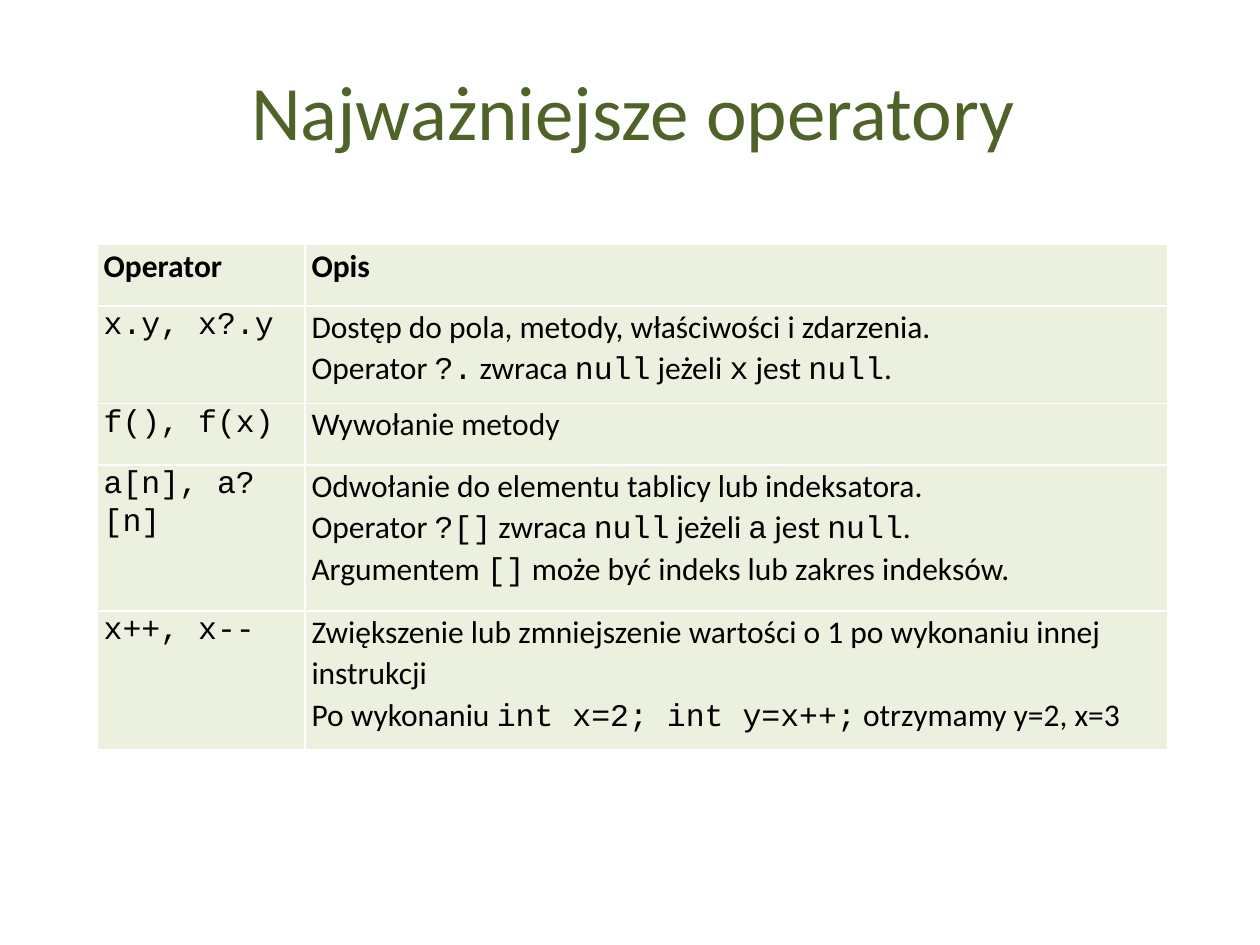
"""Build a slide with a table of the most important operators."""
from lxml.etree import SubElement
from pptx import Presentation
from pptx.dml.color import RGBColor
from pptx.enum.text import MSO_ANCHOR, PP_ALIGN
from pptx.oxml.ns import qn
from pptx.util import Cm, Pt

GREEN = RGBColor(0x4F, 0x62, 0x28)
PALE = RGBColor(0xEB, 0xF1, 0xDE)
BLACK = RGBColor(0, 0, 0)
WHITE = RGBColor(0xFF, 0xFF, 0xFF)
TEXT_FONT, CODE_FONT = "Calibri", "Courier New"

COL_WIDTHS = [4.19, 17.4]
ROW_HEIGHTS = [1.24, 1.96, 1.24, 2.95, 2.79]
ROWS = [
    ("Operator", "Opis"),
    ("`x.y, x?.y`",
     "Dostęp do pola, metody, właściwości i zdarzenia.\n"
     "Operator `?.` zwraca `null` jeżeli `x` jest `null`."),
    ("`f(), f(x)`", "Wywołanie metody"),
    ("`a[n], a?[n]`",
     "Odwołanie do elementu tablicy lub indeksatora.\n"
     "Operator `?[]` zwraca `null` jeżeli `a` jest `null`.\n"
     "Argumentem `[]` może być indeks lub zakres indeksów."),
    ("`x++, x--`",
     "Zwiększenie lub zmniejszenie wartości o 1 po wykonaniu innej instrukcji \n"
     "Po wykonaniu `int x=2; int y=x++;` otrzymamy y=2, x=3"),
]


def write_cell(cell, text, bold):
    """Fill a cell; backticks enclose code."""
    cell.margin_left = cell.margin_right = Cm(0.13)
    cell.margin_top = cell.margin_bottom = Cm(0)
    cell.vertical_anchor = MSO_ANCHOR.TOP
    p = cell.text_frame.paragraphs[0]
    p.line_spacing = 1.07
    p.space_after = Pt(8)
    p.font.size = Pt(18)
    for n, line in enumerate(text.split("\n")):
        if n:
            p.add_line_break()
        for i, part in enumerate(line.split("`")):
            if part:
                r = p.add_run()
                r.text = part
                r.font.name = CODE_FONT if i % 2 else TEXT_FONT
                r.font.size = Pt(18)
                r.font.bold = bold
                r.font.color.rgb = BLACK


def style_cell(cell):
    """Give a cell white borders and a pale fill."""
    tc_pr = cell._tc.get_or_add_tcPr()
    for side in ("a:lnL", "a:lnR", "a:lnT", "a:lnB"):
        ln = SubElement(tc_pr, qn(side), w=str(Pt(1)))
        fill = SubElement(ln, qn("a:solidFill"))
        SubElement(fill, qn("a:srgbClr"), val=str(WHITE))
    cell.fill.solid()
    cell.fill.fore_color.rgb = PALE


prs = Presentation()
prs.slide_width, prs.slide_height = Cm(25.4), Cm(19.05)
s = prs.slides.add_slide(prs.slide_layouts[5])

title = s.shapes.title
title.left, title.top = Cm(0.51), Cm(1.3)
title.width, title.height = Cm(24.51), Cm(1.83)
tf = title.text_frame
tf.text = "Najważniejsze operatory"
tf.vertical_anchor = MSO_ANCHOR.MIDDLE
p = tf.paragraphs[0]
p.alignment = PP_ALIGN.CENTER
r = p.runs[0]
r.font.name = TEXT_FONT
r.font.size = Pt(44)
r.font.color.rgb = GREEN

table = s.shapes.add_table(
    len(ROWS), len(COL_WIDTHS), Cm(1.96), Cm(4.93),
    Cm(sum(COL_WIDTHS)), Cm(sum(ROW_HEIGHTS))).table
table.horz_banding = False
for col, width in zip(table.columns, COL_WIDTHS):
    col.width = Cm(width)
for row, height, texts in zip(table.rows, ROW_HEIGHTS, ROWS):
    row.height = Cm(height)
    for cell, text in zip(row.cells, texts):
        write_cell(cell, text, bold=texts is ROWS[0])
        style_cell(cell)

prs.save("out.pptx")
